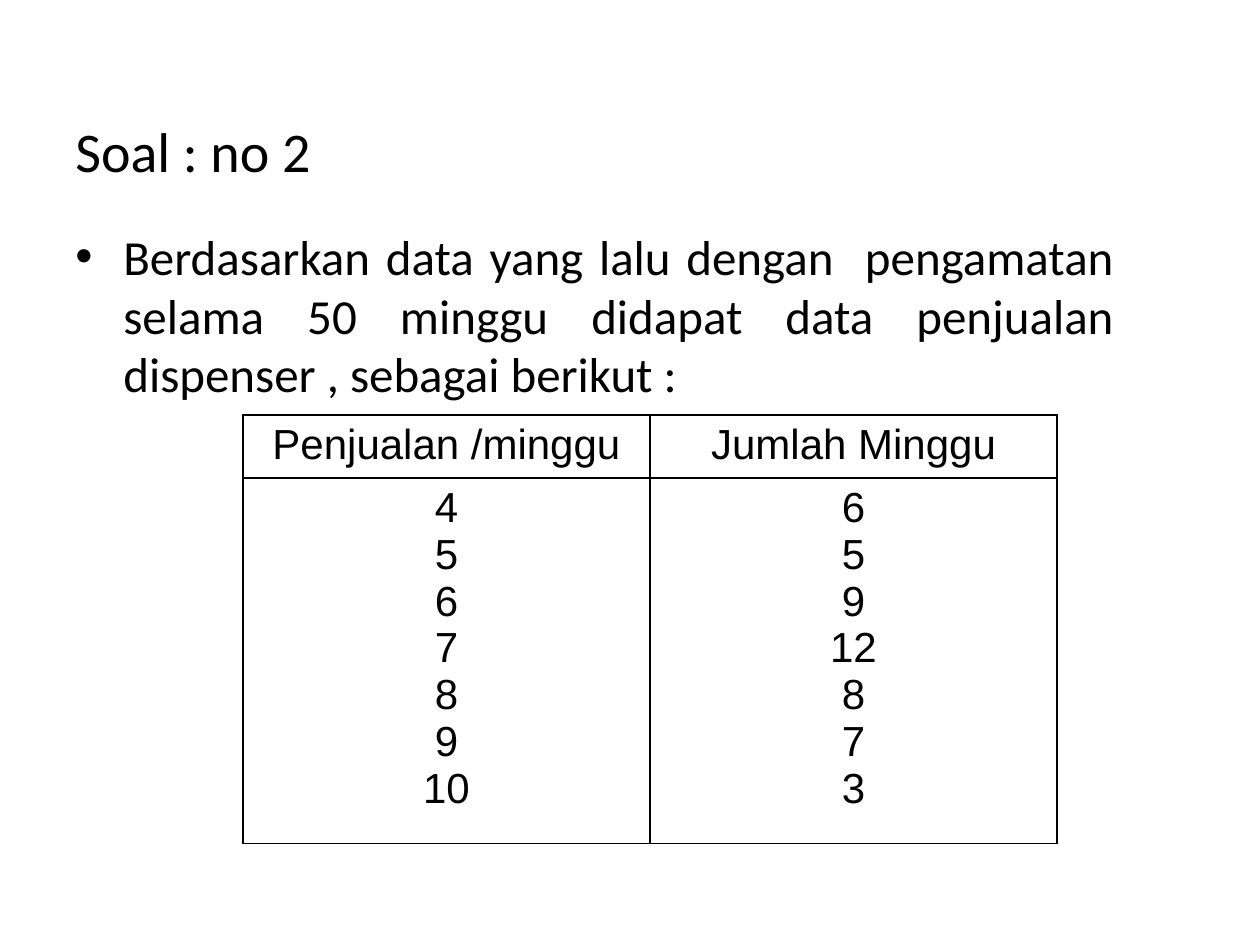
import pptx
import pptx.util
import pptx.dml.color
import pptx.enum.text
import pptx.oxml
import pptx.oxml.ns

PX = 914400 // 126
BLACK = "000000"
ALIGN = pptx.enum.text.PP_ALIGN
ANCHOR = pptx.enum.text.MSO_ANCHOR

TITLE = "Soal : no 2"
INTRO = ("Berdasarkan data yang lalu dengan  pengamatan selama 50 minggu "
         "didapat data penjualan dispenser , sebagai berikut :")
HEADERS = ("Penjualan /minggu", "Jumlah Minggu")
SALES = [(4, 6), (5, 5), (6, 9), (7, 12), (8, 8), (9, 7), (10, 3)]

TABLE_LEFT, TABLE_TOP = 243, 415
COLUMN_WIDTH = 407
ROW_HEIGHTS = (59, 340)
BULLET_INDENT = 48


def px(length):
    return pptx.util.Emu(length * PX)


def color(hex_text):
    return pptx.dml.color.RGBColor.from_string(hex_text)


def write(frame, text, size, font, align=ALIGN.LEFT, bullet=None):
    """Fill a text frame, one paragraph per line of text."""
    for index, line in enumerate(text.split("\n")):
        para = frame.paragraphs[0] if index == 0 else frame.add_paragraph()
        para.alignment = align
        if bullet:
            properties = para._p.get_or_add_pPr()
            properties.set("marL", str(px(BULLET_INDENT)))
            properties.set("indent", str(-px(BULLET_INDENT)))
            for tag, name, value in (("buFont", "typeface", "Arial"),
                                     ("buChar", "char", bullet)):
                element = pptx.oxml.ns.qn("a:" + tag)
                properties.append(properties.makeelement(element, {name: value}))
        span = para.add_run()
        span.text = line
        span.font.size = pptx.util.Pt(size)
        span.font.name = font
        span.font.color.rgb = color(BLACK)


def add_text(page, text, left, top, width, height, anchor=ANCHOR.TOP, **text_format):
    box = page.shapes.add_textbox(px(left), px(top), px(width), px(height))
    box.text_frame.word_wrap = True
    box.text_frame.vertical_anchor = anchor
    write(box.text_frame, text, **text_format)


def add_borders(cell):
    properties = cell._tc.get_or_add_tcPr()
    for position, side in enumerate(("lnL", "lnR", "lnT", "lnB")):
        line = pptx.oxml.parse_xml(
            f'<a:{side} {pptx.oxml.ns.nsdecls("a")} w="{pptx.util.Pt(1)}">'
            f'<a:solidFill><a:srgbClr val="{BLACK}"/></a:solidFill></a:{side}>')
        properties.insert(position, line)


def add_sales_table(page):
    columns = zip(*SALES)
    bodies = ["\n".join(str(value) for value in column) for column in columns]
    rows = (HEADERS, bodies)
    table = page.shapes.add_table(
        len(rows), len(HEADERS), px(TABLE_LEFT), px(TABLE_TOP),
        px(COLUMN_WIDTH * len(HEADERS)), px(sum(ROW_HEIGHTS))).table
    table.first_row = table.horz_banding = False
    for column in table.columns:
        column.width = px(COLUMN_WIDTH)
    for row_index, texts in enumerate(rows):
        table.rows[row_index].height = px(ROW_HEIGHTS[row_index])
        for column_index, text in enumerate(texts):
            cell = table.cell(row_index, column_index)
            cell.fill.background()
            add_borders(cell)
            write(cell.text_frame, text, size=24, font="Arial", align=ALIGN.CENTER)


def main():
    deck = pptx.Presentation()
    deck.slide_width, deck.slide_height = px(1260), px(945)
    page = deck.slides.add_slide(deck.slide_layouts[6])
    add_text(page, TITLE, 63, 105, 1134, 90, anchor=ANCHOR.MIDDLE,
             size=32, font="Calibri")
    add_text(page, INTRO, 63, 220, 1063, 624, size=28, font="Calibri",
             align=ALIGN.JUSTIFY, bullet="•")
    add_sales_table(page)
    deck.save("out.pptx")


if __name__ == "__main__":
    main()
